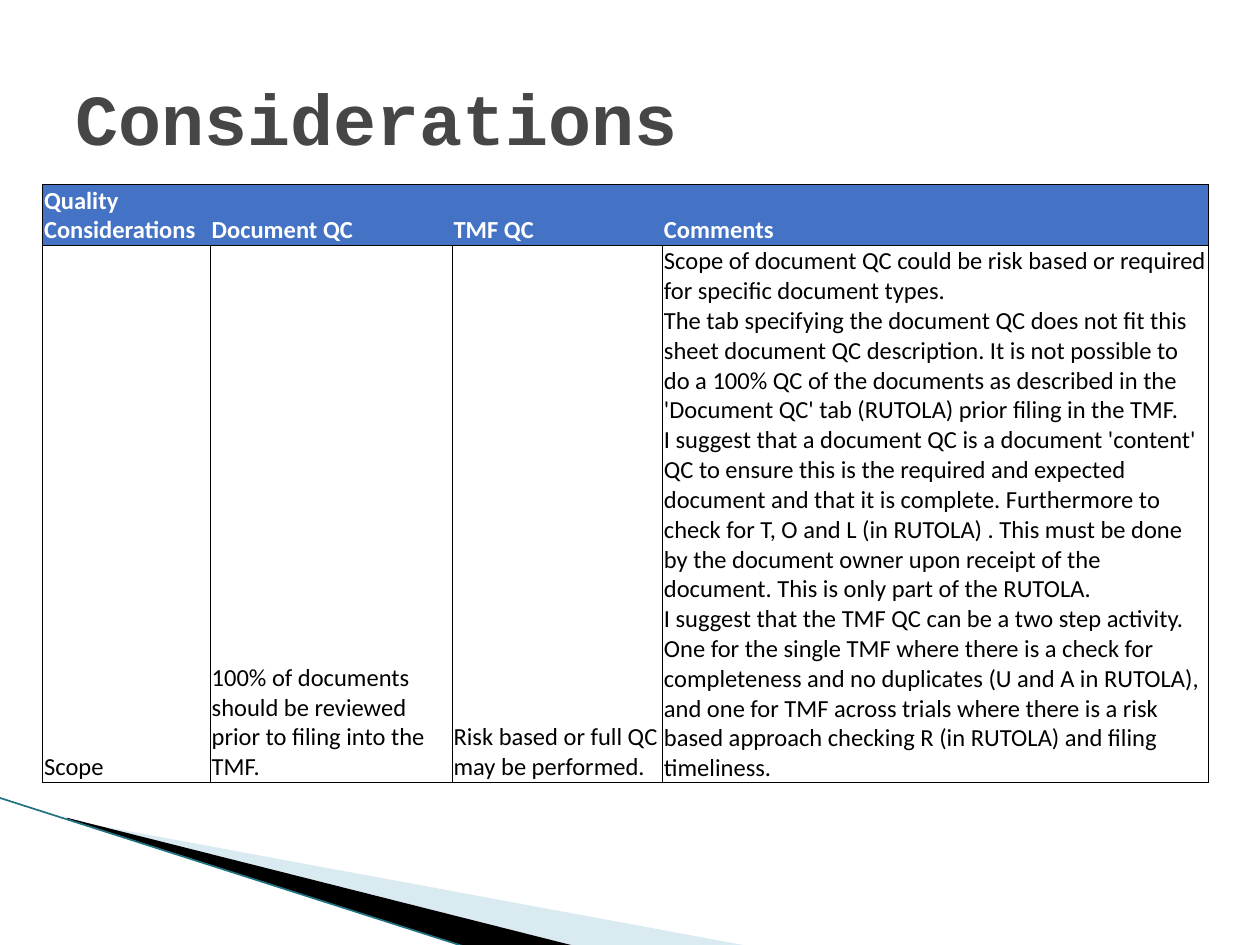
from lxml import etree
from pptx import Presentation
from pptx import util as u
from pptx.dml.color import RGBColor
from pptx.enum import shapes, text
from pptx.oxml.ns import qn

W, H = u.Inches(10), u.Inches(7.5)
COLORS = {"title": "464646", "header": "4472C4", "white": "FFFFFF",
          "black": "000000", "pale": "A0CBDC", "teal": "1F7282"}
NO_STYLE = "{2D5ABB26-0587-4C30-8999-92F81FD0307C}"

# Column widths in percent of slide width, row heights in percent of its height
COLS = [13.3, 19.2, 16.7, 43.3]
ROWS = [6.5, 56.8]
COMMENTS = [
    "Scope of document QC could be risk based or required for specific "
    "document types.",
    "The tab specifying the document QC does not fit this sheet document QC "
    "description. It is not possible to do a 100% QC of the documents as "
    "described in the 'Document QC' tab (RUTOLA) prior filing in the TMF.",
    "I suggest that a document QC is a document 'content' QC to ensure this "
    "is the required and expected document and that it is complete. "
    "Furthermore to check for T, O and L (in RUTOLA) . This must be done by "
    "the document owner upon receipt of the document. This is only part of "
    "the RUTOLA.",
    "I suggest that the TMF QC can be a two step activity. One for the "
    "single TMF where there is a check for completeness and no duplicates "
    "(U and A in RUTOLA), and one for TMF across trials where there is a "
    "risk based approach checking R (in RUTOLA) and filing timeliness.",
]
CELLS = [
    [["Quality Considerations"], ["Document QC"], ["TMF QC"], ["Comments"]],
    [["Scope"],
     ["100% of documents should be reviewed prior to filing into the TMF."],
     ["Risk based or full QC may be performed."],
     COMMENTS],
]


def x(pct):
    return round(W * pct / 100)


def y(pct):
    return round(H * pct / 100)


def rgb(name):
    return RGBColor.from_string(COLORS[name])


def write(tf, lines, size=14, font="Calibri", color="black", bold=False):
    """Write one paragraph, with a line break between the lines."""
    tf.word_wrap = True
    p = tf.paragraphs[0]
    for i, line in enumerate(lines):
        if i:
            p.add_line_break()
        r = p.add_run()
        r.text = line
        r.font.size, r.font.name, r.font.bold = u.Pt(size), font, bold
        r.font.color.rgb = rgb(color)


def add_wedge(s, points, color, alpha=None):
    pts = [(x(a), y(b)) for a, b in points]
    fb = s.shapes.build_freeform(*pts[0])
    fb.add_line_segments(pts[1:], close=True)
    sp = fb.convert_to_shape()
    sp.shadow.inherit = False
    sp.fill.solid()
    sp.fill.fore_color.rgb = rgb(color)
    sp.line.fill.background()
    if alpha:
        clr = sp._element.spPr.find(".//" + qn("a:srgbClr"))
        etree.SubElement(clr, qn("a:alpha"), val=str(alpha * 1000))


def add_line(s, start, end, color, width):
    cx = s.shapes.add_connector(shapes.MSO_CONNECTOR.STRAIGHT,
                                x(start[0]), y(start[1]), x(end[0]), y(end[1]))
    cx.line.color.rgb = rgb(color)
    cx.line.width = u.Pt(width)
    etree.SubElement(cx._element.spPr, qn("a:effectLst"))


def set_borders(cell, sides):
    """Draw the sides named (of L, R, T, B) and clear the others."""
    tcPr = cell._tc.get_or_add_tcPr()
    for side in "LRTB":
        ln = etree.SubElement(tcPr, qn("a:ln" + side), w=str(int(u.Pt(0.5))))
        if side in sides:
            fill = etree.SubElement(ln, qn("a:solidFill"))
            etree.SubElement(fill, qn("a:srgbClr"), val=COLORS["black"])
        else:
            etree.SubElement(ln, qn("a:noFill"))


def add_grid(s, left, top):
    frame = s.shapes.add_table(len(ROWS), len(COLS), x(left), y(top),
                               x(sum(COLS)), y(sum(ROWS)))
    tb = frame.table
    tb.first_row = tb.horz_banding = False
    tb._tbl.tblPr.find(qn("a:tableStyleId")).text = NO_STYLE
    for col, width in zip(tb.columns, COLS):
        col.width = x(width)
    for i, (row, height) in enumerate(zip(tb.rows, ROWS)):
        row.height = y(height)
        header = i == 0
        for j, lines in enumerate(CELLS[i]):
            cell = tb.cell(i, j)
            cell.margin_left = cell.margin_right = cell.margin_top = u.Inches(0.01)
            cell.margin_bottom = 0
            cell.vertical_anchor = text.MSO_ANCHOR.BOTTOM
            # The header row has only an outer frame
            outer = "L" * (j == 0) + "R" * (j == len(COLS) - 1)
            set_borders(cell, "TB" + outer if header else "LRTB")
            if header:
                cell.fill.solid()
                cell.fill.fore_color.rgb = rgb("header")
            else:
                cell.fill.background()
            write(cell.text_frame, lines, bold=header,
                  color="white" if header else "black")


def add_title(s, words):
    tb = s.shapes.add_textbox(x(5), y(4), x(90), y(16.67))
    tb.text_frame.vertical_anchor = text.MSO_ANCHOR.MIDDLE
    write(tb.text_frame, [words], size=41, font="Courier New",
          color="title", bold=True)


def main():
    prs = Presentation()
    prs.slide_width, prs.slide_height = W, H
    s = prs.slides.add_slide(prs.slide_layouts[6])
    # Corner decoration
    add_wedge(s, [(5.5, 86.8), (59.5, 100.13), (45.6, 100.13), (5.5, 86.67)],
              "pale", alpha=40)
    add_wedge(s, [(5.3, 86.53), (45.7, 100.13), (37.2, 100.27), (5.4, 86.67)],
              "black")
    add_line(s, (-0.1, 84.4), (37.1, 100.27), "teal", 0.95)
    # Content
    add_title(s, "Considerations")
    add_grid(s, 3.4, 19.47)
    prs.save("out.pptx")


if __name__ == "__main__":
    main()
